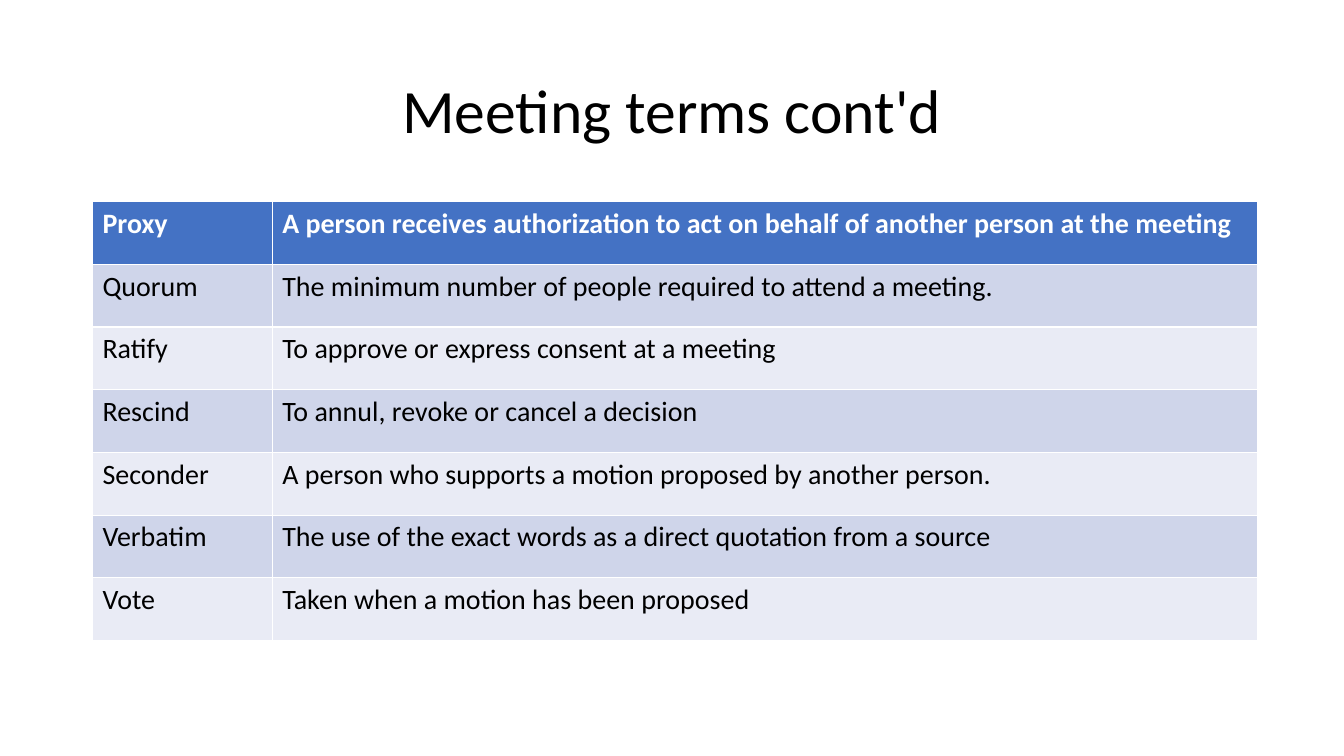
import pptx
import pptx.dml.color
import pptx.enum.text
import pptx.util
from pptx.util import Cm

COLORS = {
    "header": "4472C4",
    "band_dark": "CFD5EA",
    "band_light": "E9EBF5",
    "white": "FFFFFF",
    "black": "000000",
}
TERMS = [
    ("Proxy", "A person receives authorization to act on behalf of another person at the meeting"),
    ("Quorum", "The minimum number of people required to attend a meeting."),
    ("Ratify", "To approve or express consent at a meeting"),
    ("Rescind", "To annul, revoke or cancel a decision"),
    ("Seconder", "A person who supports a motion proposed by another person."),
    ("Verbatim", "The use of the exact words as a direct quotation from a source"),
    ("Vote", "Taken when a motion has been proposed"),
]


def color(name):
    return pptx.dml.color.RGBColor.from_string(COLORS[name])


def format_font(paragraph, size, color_name, bold=False):
    paragraph.font.name = "Calibri"
    paragraph.font.size = pptx.util.Pt(size)
    paragraph.font.bold = bold
    paragraph.font.color.rgb = color(color_name)


presentation = pptx.Presentation()
presentation.slide_width = Cm(33.87)
presentation.slide_height = Cm(19.05)
slide = presentation.slides.add_slide(presentation.slide_layouts[5])

# Title
title = slide.shapes.title
title.left, title.top, title.width, title.height = Cm(2.33), Cm(1.01), Cm(29.21), Cm(3.68)
title.text_frame.text = "Meeting terms cont'd"
title.text_frame.auto_size = pptx.enum.text.MSO_AUTO_SIZE.NONE
title.text_frame.vertical_anchor = pptx.enum.text.MSO_ANCHOR.MIDDLE
paragraph = title.text_frame.paragraphs[0]
paragraph.alignment = pptx.enum.text.PP_ALIGN.CENTER
paragraph.line_spacing = 0.9
format_font(paragraph, 44, "black")

# Table of terms; its default style draws the white borders
row_height = Cm(1.58)
table = slide.shapes.add_table(
    len(TERMS), 2, Cm(2.33), Cm(5.08), Cm(29.35), row_height * len(TERMS)
).table
table.columns[0].width = Cm(4.53)
table.columns[1].width = Cm(24.82)

for row_index, term in enumerate(TERMS):
    table.rows[row_index].height = row_height
    is_header = row_index == 0
    band = "band_dark" if row_index % 2 else "band_light"
    for column_index, text in enumerate(term):
        cell = table.cell(row_index, column_index)
        cell.text = text
        cell.fill.solid()
        cell.fill.fore_color.rgb = color("header" if is_header else band)
        format_font(cell.text_frame.paragraphs[0], 20,
                    "white" if is_header else "black", is_header)

presentation.save("out.pptx")
